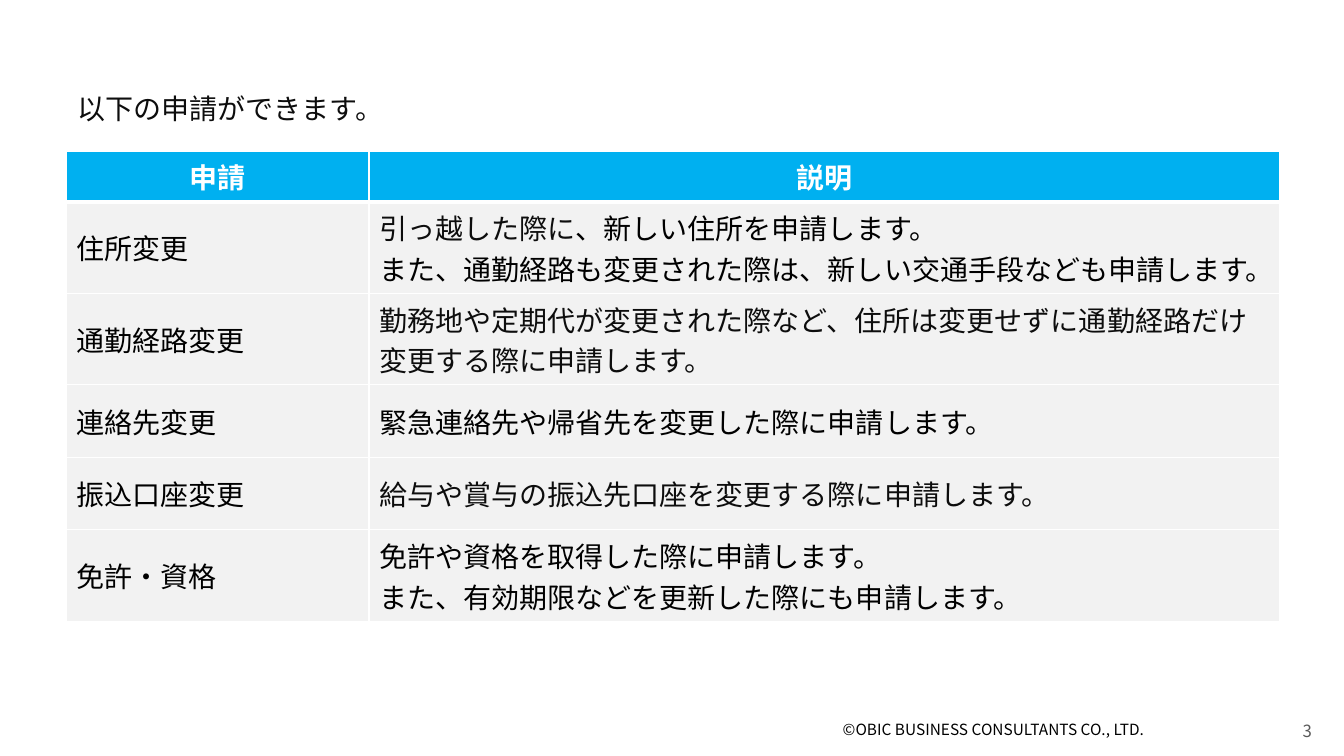
from dataclasses import dataclass

from lxml import etree
from pptx import Presentation
from pptx import util as u
from pptx.dml.color import RGBColor
from pptx.enum import text
from pptx.oxml import ns

WHITE = RGBColor(0xFF, 0xFF, 0xFF)
BLACK = RGBColor(0x00, 0x00, 0x00)
INK = RGBColor(0x0D, 0x0D, 0x0D)
GRAY = RGBColor(0x59, 0x59, 0x59)
SKY = RGBColor(0x00, 0xB0, 0xF0)
PALE = RGBColor(0xF2, 0xF2, 0xF2)

FONT = "Noto Sans CJK JP"
BODY_SIZE = 20
LEFT, CENTER, RIGHT = text.PP_ALIGN.LEFT, text.PP_ALIGN.CENTER, text.PP_ALIGN.RIGHT

# Slide and table grid, in inches
SLIDE_W, SLIDE_H = 13.33, 7.5
TABLE_LEFT, TABLE_TOP = 0.66, 1.5
COLUMNS = (3, 9.03)
HEADER_H, ROW_H = 0.45, 0.72
RULE, HEADER_RULE = 1, 3


@dataclass(frozen=True)
class Run:
    words: str
    color: RGBColor = BLACK
    size: float = BODY_SIZE
    bold: bool = False


@dataclass(frozen=True)
class Request:
    name: str
    description: list[list[Run]]


@dataclass(frozen=True)
class Caption:
    left: float
    top: float
    width: float
    height: float
    run: Run
    align: text.PP_ALIGN = LEFT
    line_spacing: float = 1.0


REQUESTS = [
    Request("住所変更", [[
        Run("引っ越した際に", INK),
        Run("、新しい住所を申請します。\n"
            "また、通勤経路も変更された際は、新しい交通手段なども申請します。"),
    ]]),
    Request("通勤経路変更", [[
        Run("勤務地や定期代が変更された際など、住所は変更せずに通勤経路だけ変更する際に申請します。", INK),
    ]]),
    Request("連絡先変更", [[Run("緊急連絡先や帰省先を変更した際に申請します。")]]),
    Request("振込口座変更", [[Run("給与や賞与の振込先口座を変更する際に申請します。", INK)]]),
    Request("免許・資格", [
        [Run("免許や資格を取得した際に申請します。")],
        [Run("また、有効期限などを更新した際にも申請します。")],
    ]),
]

CAPTIONS = [
    Caption(0.67, 0.76, 12, 0.47, Run("以下の申請ができます。", INK), line_spacing=1.3),
    Caption(8.26, 7.1, 4.5, 0.4, Run("©OBIC BUSINESS CONSULTANTS CO., LTD.", size=11)),
    Caption(10.11, 7.1, 3, 0.4, Run("3", GRAY, 12), RIGHT),
]


def add_run(paragraph, run: Run) -> None:
    for index, line in enumerate(run.words.split("\n")):
        if index:
            paragraph.add_line_break()
        piece = paragraph.add_run()
        piece.text = line
        piece.font.size = u.Pt(run.size)
        piece.font.bold = run.bold
        piece.font.color.rgb = run.color
        piece.font.name = FONT
        etree.SubElement(piece.font._element, ns.qn("a:ea"), typeface=FONT)


def write(frame, paragraphs: list[list[Run]], align: text.PP_ALIGN) -> None:
    for index, runs in enumerate(paragraphs):
        paragraph = frame.add_paragraph() if index else frame.paragraphs[0]
        paragraph.alignment = align
        for run in runs:
            add_run(paragraph, run)


def add_borders(cell, top: float, bottom: float) -> None:
    properties = cell._tc.get_or_add_tcPr()
    for side, points in (("L", RULE), ("R", RULE), ("T", top), ("B", bottom)):
        line = etree.SubElement(properties, ns.qn(f"a:ln{side}"), w=str(int(u.Pt(points))))
        fill = etree.SubElement(line, ns.qn("a:solidFill"))
        etree.SubElement(fill, ns.qn("a:srgbClr"), val=str(WHITE))


def add_request_table(slide) -> None:
    heading = [[[Run(label, WHITE, bold=True)]] for label in ("申請", "説明")]
    rows = [heading] + [[[[Run(r.name)]], r.description] for r in REQUESTS]
    heights = [HEADER_H] + [ROW_H] * len(REQUESTS)
    table = slide.shapes.add_table(
        len(rows), len(COLUMNS), u.Inches(TABLE_LEFT), u.Inches(TABLE_TOP),
        u.Inches(sum(COLUMNS)), u.Inches(sum(heights))).table
    for column, width in zip(table.columns, COLUMNS):
        column.width = u.Inches(width)
    for index, (row, height) in enumerate(zip(rows, heights)):
        table.rows[index].height = u.Inches(height)
        is_header = index == 0
        for cell, paragraphs in zip(table.rows[index].cells, row):
            add_borders(cell, HEADER_RULE if index == 1 else RULE,
                        HEADER_RULE if is_header else RULE)
            cell.fill.solid()
            cell.fill.fore_color.rgb = SKY if is_header else PALE
            cell.vertical_anchor = text.MSO_ANCHOR.MIDDLE
            write(cell.text_frame, paragraphs, CENTER if is_header else LEFT)


def add_caption(slide, caption: Caption) -> None:
    place = (caption.left, caption.top, caption.width, caption.height)
    frame = slide.shapes.add_textbox(*map(u.Inches, place)).text_frame
    frame.word_wrap = True
    write(frame, [[caption.run]], caption.align)
    frame.paragraphs[0].line_spacing = caption.line_spacing


def main() -> None:
    deck = Presentation()
    deck.slide_width, deck.slide_height = u.Inches(SLIDE_W), u.Inches(SLIDE_H)
    slide = deck.slides.add_slide(deck.slide_layouts.get_by_name("Blank"))

    # Table of requests
    add_request_table(slide)

    # Introduction, copyright line and page number
    for caption in CAPTIONS:
        add_caption(slide, caption)

    deck.save("out.pptx")


if __name__ == "__main__":
    main()
